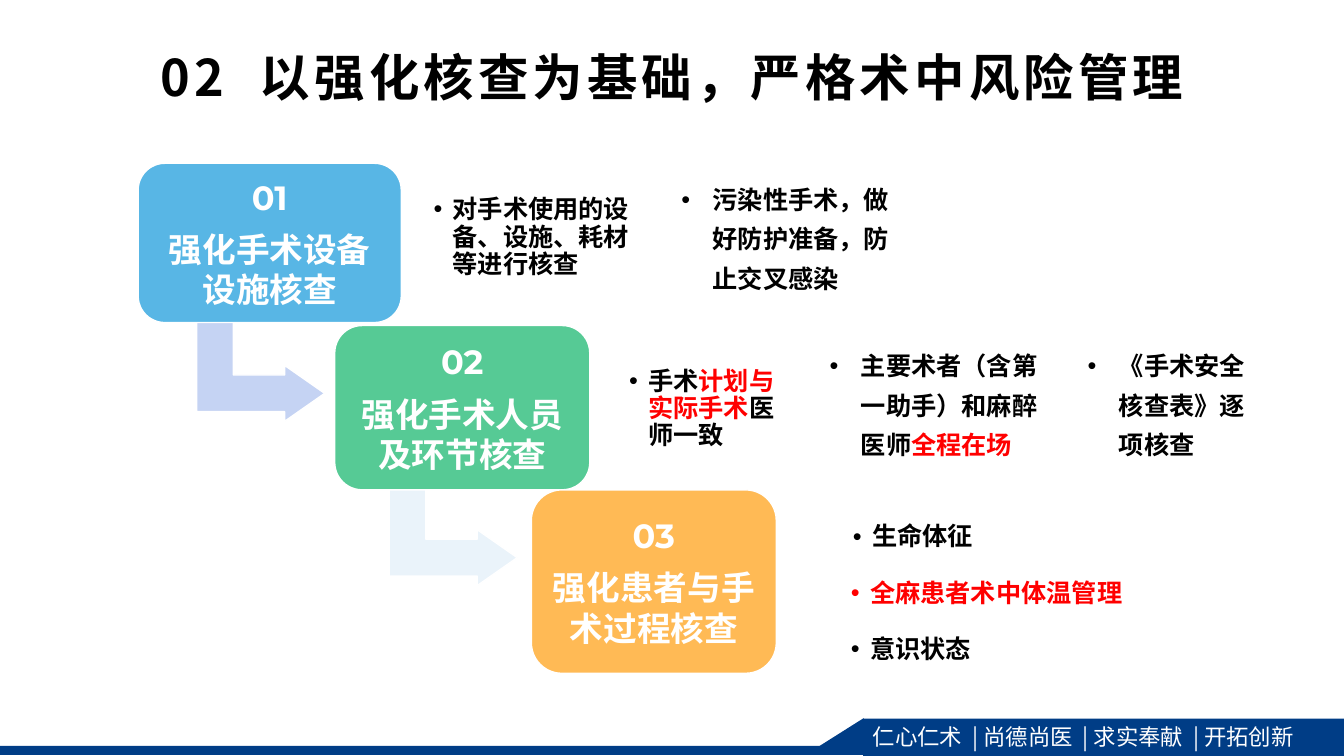
from pptx import Presentation
from pptx.dml.color import RGBColor
from pptx.enum.shapes import MSO_SHAPE as Preset
from pptx.enum.text import MSO_ANCHOR as Anchor, PP_ALIGN as Align
from pptx.oxml.ns import qn
from pptx.util import Pt
from lxml.etree import SubElement

PX = 9144
BLACK = RGBColor(0x00, 0x00, 0x00)
WHITE = RGBColor(0xFF, 0xFF, 0xFF)
RED = RGBColor(0xFF, 0x00, 0x00)
NAVY = RGBColor(0x00, 0x3D, 0x86)
BLUE = RGBColor(0x58, 0xB6, 0xE5)
GREEN = RGBColor(0x56, 0xCA, 0x95)
ORANGE = RGBColor(0xFF, 0xBA, 0x55)
LILAC = RGBColor(0xC5, 0xD3, 0xF3)
PALE = RGBColor(0xEA, 0xF3, 0xFA)

TITLE_FONT = "Noto Sans CJK SC"
FOOTER_FONT = "Noto Sans CJK JP"
NUMBER_FONT = "Montserrat"
BODY_FONT = "Arial"

STEPS = [
    ((137, 162, 261, 158), BLUE, "01", "强化手术设备设施核查"),
    ((332, 323, 253, 163), GREEN, "02", "强化手术人员及环节核查"),
    ((527, 486, 243, 182), ORANGE, "03", "强化患者与手术过程核查"),
]
ARROWS = [((203, 299, 111, 127), LILAC), ((394, 462, 111, 127), PALE)]
TIGHT_NOTES = [
    ((423, 183, 228, 106), [("对手术使用的设备、设施、耗材等进行核查", BLACK)]),
    ((617, 353, 175, 106), [("手术", BLACK), ("计划与实际手术", RED), ("医师一致", BLACK)]),
    ((839, 509, 136, 49), [("生命体征", BLACK)]),
    ((837, 561, 302, 58), [("全麻患者术中体温管理", RED)]),
    ((837, 616, 162, 58), [("意识状态", BLACK)]),
]
LOOSE_NOTES = [
    ((666, 169, 229, 124), [("污染性手术，做好防护准备，防止交叉感染", BLACK)]),
    ((813, 334, 247, 124), [("主要术者（含第一助手）和麻醉医师", BLACK), ("全程在场", RED)]),
    ((1069, 334, 197, 124), [("《手术安全核查表》逐项核查", BLACK)]),
]


def add_preset(slide, preset, box, color, outlined=False, adjustments=(), rotation=0):
    shape = slide.shapes.add_shape(preset, *(length * PX for length in box))
    shape.shadow.inherit = False
    shape.fill.solid()
    shape.fill.fore_color.rgb = color
    if outlined:
        shape.line.color.rgb = WHITE
        shape.line.width = Pt(1)
    else:
        shape.line.fill.background()
    for index, value in enumerate(adjustments):
        shape.adjustments[index] = value
    shape.rotation = rotation
    return shape


def set_frame(frame, side, top, anchor):
    frame.word_wrap = True
    frame.margin_left = frame.margin_right = side * PX
    frame.margin_top = frame.margin_bottom = top * PX
    frame.vertical_anchor = anchor
    return frame


def add_text_box(slide, box, side=10, top=5, anchor=Anchor.MIDDLE):
    shape = slide.shapes.add_textbox(*(length * PX for length in box))
    return set_frame(shape.text_frame, side, top, anchor)


def add_run(paragraph, text, size, color, font, east_asian, bold=True):
    run = paragraph.add_run()
    run.text = text
    run.font.size = Pt(size)
    run.font.bold = bold
    run.font.color.rgb = color
    run.font.name = font
    properties = run.font._element
    SubElement(properties, qn("a:ea")).set("typeface", east_asian)
    return properties


def add_title(slide, box):
    paragraph = add_text_box(slide, box).paragraphs[0]
    paragraph.alignment = Align.CENTER
    properties = add_run(paragraph, "02  以强化核查为基础，严格术中风险管理",
                         36, BLACK, TITLE_FONT, TITLE_FONT)
    properties.set("spc", "300")


def add_footer(slide, box):
    left, top, width, height = box
    add_preset(slide, Preset.RECTANGLE, (left, top + 27, 1004, 9), NAVY)
    add_preset(slide, Preset.RIGHT_TRIANGLE, (left + 810, top - 11, 36, 57), NAVY, rotation=270)
    banner = add_preset(slide, Preset.RECTANGLE, (left + 856, top, width - 856, height), NAVY)
    frame = set_frame(banner.text_frame, 10, 5, Anchor.TOP)
    paragraph = frame.paragraphs[0]
    paragraph.alignment = Align.LEFT
    add_run(paragraph, "仁心仁术  | 尚德尚医  | 求实奉献  | 开拓创新",
            16, WHITE, FOOTER_FONT, FOOTER_FONT, bold=False)


def add_step(slide, box, color, number, heading):
    left, top, width, height = box
    add_preset(slide, Preset.ROUNDED_RECTANGLE, box, color, True, [0.167])
    frame = add_text_box(slide, (left + 8, top + 8, width - 16, height - 16), 10, 10)
    for index, text in enumerate((number, heading)):
        paragraph = frame.add_paragraph() if index else frame.paragraphs[0]
        paragraph.alignment = Align.CENTER
        paragraph.space_after = Pt(8.4)
        add_run(paragraph, text, 24, WHITE, NUMBER_FONT, NUMBER_FONT)


def add_bullet(frame, runs, indent, line_spacing, space_after=0):
    paragraph = frame.paragraphs[0]
    paragraph.line_spacing = line_spacing
    paragraph.space_after = Pt(space_after)
    properties = paragraph._p.get_or_add_pPr()
    properties.set("marL", str(indent * PX))
    properties.set("indent", str(-indent * PX))
    SubElement(properties, qn("a:buFont")).set("typeface", BODY_FONT)
    SubElement(properties, qn("a:buChar")).set("char", "•")
    for text, color in runs:
        add_run(paragraph, text, 18, color, BODY_FONT, NUMBER_FONT)


def add_tight_note(slide, box, runs):
    add_bullet(add_text_box(slide, box, 7, 7), runs, 19, 0.9, 2.7)


def add_loose_note(slide, box, runs):
    add_bullet(add_text_box(slide, box, anchor=Anchor.TOP), runs, 31, 1.3)


def main():
    presentation = Presentation()
    presentation.slide_width = 1333 * PX
    presentation.slide_height = 750 * PX
    slide = presentation.slides.add_slide(presentation.slide_layouts[6])
    add_footer(slide, (0, 713, 1333, 37))
    add_title(slide, (67, 37, 1200, 77))
    for box, color in ARROWS:
        add_preset(slide, Preset.BENT_UP_ARROW, box, color, True, [0.328, 0.25, 0.358], 90)
    for step in STEPS:
        add_step(slide, *step)
    for box, runs in TIGHT_NOTES:
        add_tight_note(slide, box, runs)
    for box, runs in LOOSE_NOTES:
        add_loose_note(slide, box, runs)
    presentation.save("out.pptx")


if __name__ == "__main__":
    main()
